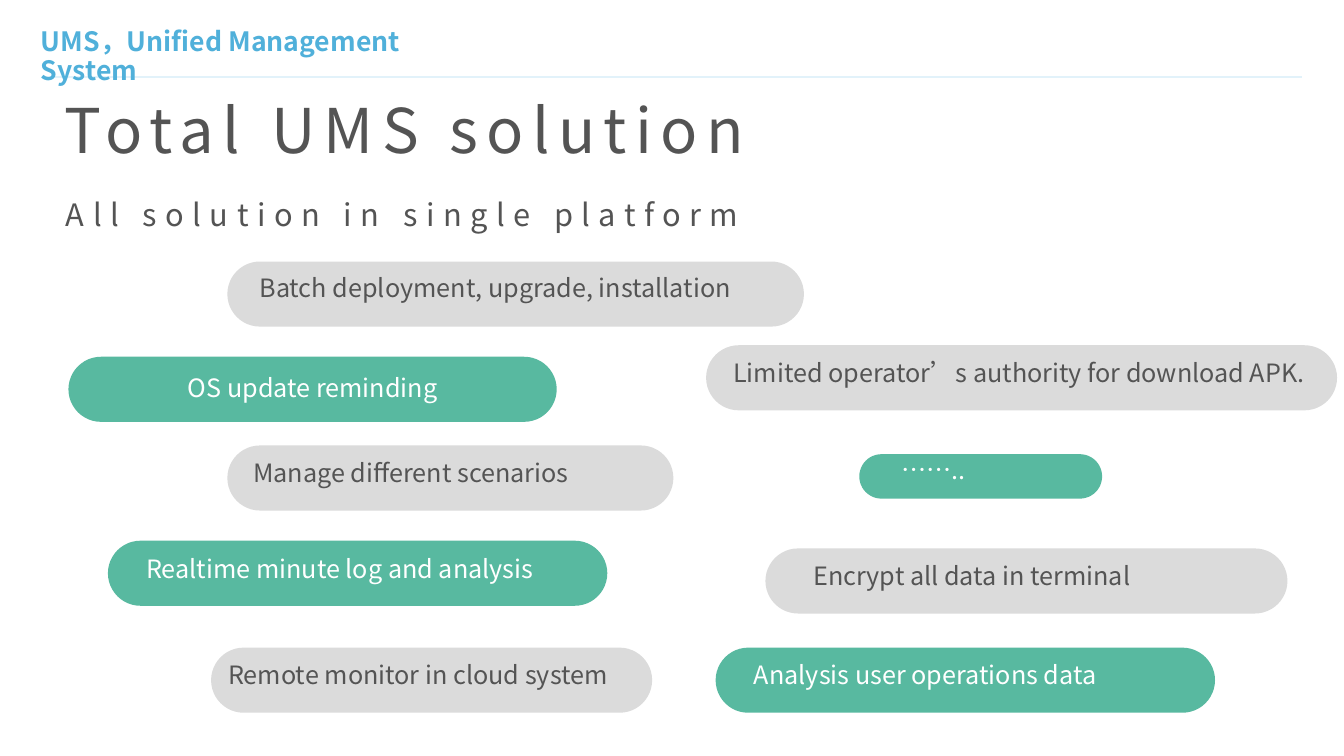
from collections import namedtuple
from dataclasses import dataclass

import pptx
import pptx.dml.color
import pptx.enum.shapes
import pptx.enum.text
import pptx.oxml.ns
import pptx.util
from lxml import etree

Cm = pptx.util.Cm
Box = namedtuple("Box", "left top width height")
Pill = namedtuple("Pill", "box color text_color text indent drop")


@dataclass(frozen=True)
class Theme:
    """Colours, type sizes and spacing of the slide."""
    font: str = "Noto Sans CJK SC"
    dark: str = "545454"
    white: str = "FFFFFF"
    grey: str = "DBDBDB"
    green: str = "58B9A0"
    blue: str = "50B0DA"
    rule: str = "E2F2FA"
    header: int = 38
    title: int = 88
    subtitle: int = 44
    label: int = 36
    tracking: int = 1210
    leading: float = 0.9


THEME = Theme()
PILL_HEIGHT = 3.28
LABEL_HEIGHT = 1.8


def rgb(color):
    """Turn a hex string into a colour."""
    return pptx.dml.color.RGBColor.from_string(color)


def lengths(box):
    """Give the four measures of a box as lengths."""
    return [Cm(value) for value in box]


def write(shape, text, size, color, bold=False, tracking=0, centred=False):
    """Write one formatted run into a shape."""
    frame = shape.text_frame
    frame.word_wrap = True
    frame.auto_size = pptx.enum.text.MSO_AUTO_SIZE.NONE
    anchor = pptx.enum.text.MSO_ANCHOR
    frame.vertical_anchor = anchor.MIDDLE if centred else anchor.TOP
    para = frame.paragraphs[0]
    align = pptx.enum.text.PP_ALIGN
    para.alignment = align.CENTER if centred else align.LEFT
    para.line_spacing = THEME.leading
    para.space_before = pptx.util.Pt(0)
    span = para.add_run()
    span.text = text
    span.font.size = pptx.util.Pt(size)
    span.font.bold = bold
    span.font.color.rgb = rgb(color)
    span.font.name = THEME.font
    props = span.font._element
    etree.SubElement(props, pptx.oxml.ns.qn("a:ea"), typeface=THEME.font)
    if tracking:
        props.set("spc", str(tracking))


def add_header(page, box):
    """Draw the rule and the running header over it."""
    middle = Cm(box.top + 2.57)
    rule = page.shapes.add_connector(
        pptx.enum.shapes.MSO_CONNECTOR.STRAIGHT,
        Cm(box.left + 0.18), middle, Cm(box.left + box.width), middle)
    rule.line.color.rgb = rgb(THEME.rule)
    rule.line.width = pptx.util.Pt(2)
    etree.SubElement(rule._element.spPr, pptx.oxml.ns.qn("a:effectLst"))
    header = page.shapes.add_textbox(
        *lengths(Box(box.left, box.top, 22.35, box.height)))
    frame = header.text_frame
    frame.margin_left = frame.margin_right = Cm(0.13)
    write(header, "UMS，Unified Management System",
          THEME.header, THEME.blue, bold=True)


def add_heading(holder, box, text, size):
    """Move a placeholder into its box and fill it."""
    holder.left, holder.top, holder.width, holder.height = lengths(box)
    write(holder, text, size, THEME.dark, tracking=THEME.tracking)


def add_capsule(shapes, box, color):
    """Draw a filled shape with fully round ends."""
    capsule = shapes.add_shape(
        pptx.enum.shapes.MSO_SHAPE.ROUNDED_RECTANGLE, *lengths(box))
    capsule.adjustments[0] = 0.5
    capsule.shadow.inherit = False
    capsule.fill.solid()
    capsule.fill.fore_color.rgb = rgb(color)
    capsule.line.fill.background()
    return capsule


def add_pill(page, pill):
    """Draw a capsule with its label, centred if no indent is given."""
    box = pill.box
    if pill.indent is None:
        capsule = add_capsule(page.shapes, box, pill.color)
        write(capsule, pill.text, THEME.label, pill.text_color, centred=True)
        return
    group = page.shapes.add_group_shape()
    add_capsule(group.shapes, box, pill.color)
    label = group.shapes.add_textbox(*lengths(Box(
        box.left + pill.indent, box.top + pill.drop,
        box.width - pill.indent, LABEL_HEIGHT)))
    write(label, pill.text, THEME.label, pill.text_color)


def grey(left, top, width, text, indent, drop=0.66):
    """Describe a grey pill with dark text."""
    box = Box(left, top, width, PILL_HEIGHT)
    return Pill(box, THEME.grey, THEME.dark, text, indent, drop)


def green(left, top, width, text, indent=None, drop=0.66, height=PILL_HEIGHT):
    """Describe a green pill with white text."""
    box = Box(left, top, width, height)
    return Pill(box, THEME.green, THEME.white, text, indent, drop)


PILLS = [
    grey(11.46, 13.18, 29.06, "Batch deployment, upgrade, installation", 1.37, 0.59),
    green(3.45, 17.98, 24.61, "OS update reminding"),
    grey(11.46, 22.45, 22.48, "Manage different scenarios", 1.06),
    green(5.44, 27.25, 25.17, "Realtime minute log and analysis", 1.68),
    green(43.31, 22.89, 12.24, "……..", 1.88, 0.05, 2.24),
    grey(38.58, 27.64, 26.31, "Encrypt all data in terminal", 2.16),
    grey(35.59, 17.4, 31.8, "Limited operator’s authority for download APK.", 1.12),
    grey(10.64, 32.64, 22.23, "Remote monitor in cloud system", 0.61),
    green(36.07, 32.64, 25.17, "Analysis user operations data", 1.68),
]


def main():
    """Build the slide and save it."""
    deck = pptx.Presentation()
    deck.slide_width, deck.slide_height = Cm(67.74), Cm(38.1)
    page = deck.slides.add_slide(deck.slide_layouts[0])
    add_header(page, Box(1.93, 1.32, 63.68, 1.88))
    add_heading(page.shapes.title, Box(3, 4.93, 40.31, 4.01),
                "Total UMS solution", THEME.title)
    add_heading(page.placeholders[1], Box(3.07, 9.96, 49.3, 2.13),
                "All solution in single platform", THEME.subtitle)
    for pill in PILLS:
        add_pill(page, pill)
    deck.save("out.pptx")


if __name__ == "__main__":
    main()
